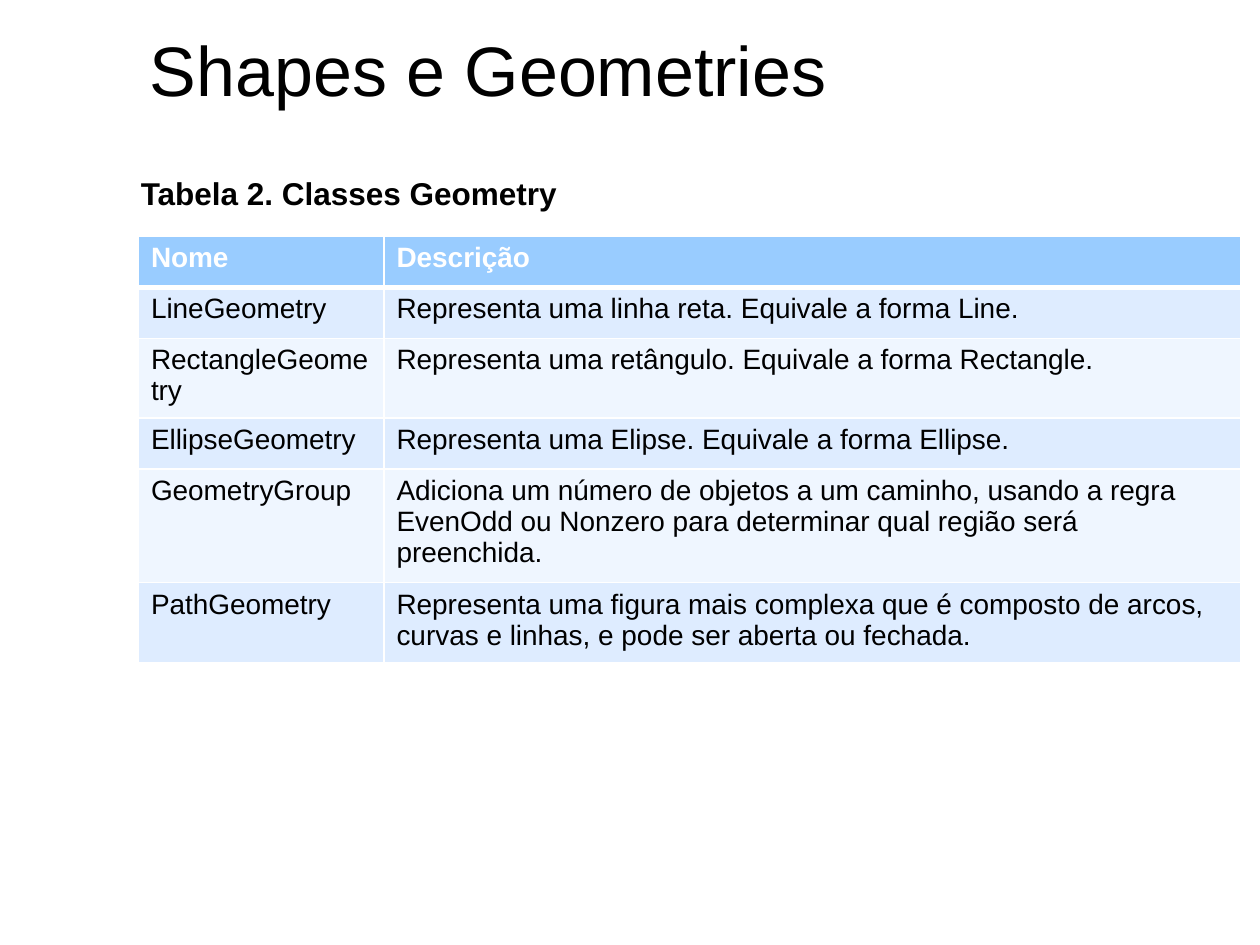
from lxml import etree
from pptx import Presentation
from pptx.dml.color import RGBColor
from pptx.oxml.ns import qn
from pptx.util import Cm, Pt

BLACK, WHITE = "000000", "FFFFFF"
HEAD, DARK, LIGHT = "99CCFF", "DEECFF", "EFF6FF"


def write(frame, text, size, color, bold=False):
    frame.word_wrap = True
    run = frame.paragraphs[0].add_run()
    run.text = text
    font = run.font
    font.name, font.size, font.bold = "Arial", Pt(size), bold
    font.color.rgb = RGBColor.from_string(color)


def edge(cell, low):
    """Draw white cell borders, with the bottom one low points wide."""
    props = cell._tc.get_or_add_tcPr()
    for i, (side, width) in enumerate(zip("LRTB", (1, 1, 1, low))):
        line = etree.Element(qn(f"a:ln{side}"), w=str(Pt(width)))
        fill = etree.SubElement(line, qn("a:solidFill"))
        etree.SubElement(fill, qn("a:srgbClr"), val=WHITE)
        props.insert(i, line)


deck = Presentation()
deck.slide_width, deck.slide_height = Cm(25.4), Cm(19.05)
slide = deck.slides.add_slide(deck.slide_layouts[6])

heads = [
    ("Shapes e Geometries", 2.77, 0.41, 15.29, 1.96, 40, False),
    ("Tabela 2. Classes Geometry", 2.59, 3.38, 22.43, 1.02, 18, True),
]
for text, left, top, width, height, size, bold in heads:
    box = slide.shapes.add_textbox(Cm(left), Cm(top), Cm(width), Cm(height))
    write(box.text_frame, text, size, BLACK, bold)

rows = [
    ("Nome", "Descrição"),
    ("LineGeometry", "Representa uma linha reta. Equivale a forma Line."),
    ("RectangleGeometry", "Representa uma retângulo. Equivale a forma Rectangle."),
    ("EllipseGeometry", "Representa uma Elipse. Equivale a forma Ellipse."),
    ("GeometryGroup", "Adiciona um número de objetos a um caminho, usando a regra "
     "EvenOdd ou Nonzero para determinar qual região será preenchida."),
    ("PathGeometry", "Representa uma figura mais complexa que é composto de arcos, "
     "curvas e linhas, e pode ser aberta ou fechada."),
]
widths = (4.95, 17.27)
table = slide.shapes.add_table(
    len(rows), len(widths), Cm(2.79), Cm(4.76), Cm(sum(widths)), Cm(1.03 * len(rows))
).table
for col, width in zip(table.columns, widths):
    col.width = Cm(width)

for r, row in enumerate(rows):
    table.rows[r].height = Cm(1.03)
    top = r == 0
    shade = HEAD if top else DARK if r % 2 else LIGHT
    for c, text in enumerate(row):
        cell = table.cell(r, c)
        edge(cell, 3 if top else 1)
        cell.fill.solid()
        cell.fill.fore_color.rgb = RGBColor.from_string(shade)
        write(cell.text_frame, text, 16, WHITE if top else BLACK, top)

deck.save("out.pptx")
